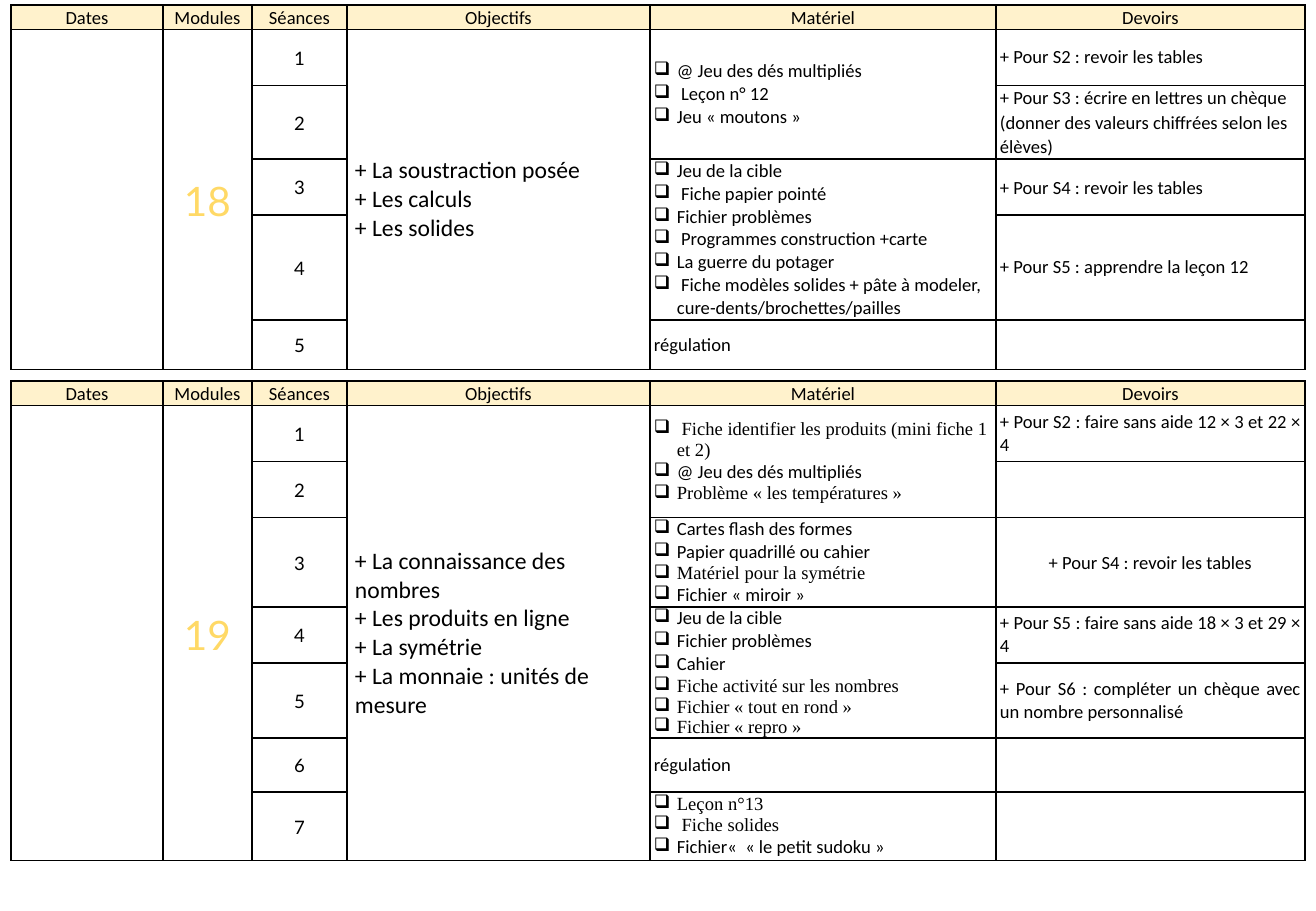
from lxml.etree import SubElement
from pptx import Presentation
from pptx.dml.color import RGBColor
from pptx.enum.text import MSO_ANCHOR, PP_ALIGN
from pptx.oxml.ns import qn
from pptx.util import Pt

PX = 914400 / 121.5
SLIDE_SIZE = (1316, 911)
LEFT = 11
COLUMN_WIDTHS = (152, 89, 95, 303, 346, 309)
INSET, WIDE_INSET, BULLET_INDENT = 4, 8, 23
COLORS = {"text": "000000", "border": "000000", "header": "FFF2CC",
          "session": "FFFFFF", "module": "FFD966"}
SANS, NUMBER, SERIF = "Calibri", "Lato", "Times New Roman"

HEADERS = ("Dates", "Modules", "Séances", "Objectifs", "Matériel", "Devoirs")
SPACED = {"line": 1.07, "before": 14}
CENTERED = {**SPACED, "align": PP_ALIGN.CENTER}
CLOSE = {"before": 3}
JUSTIFIED = {**CLOSE, "align": PP_ALIGN.JUSTIFY}

MODULES = [
    {
        "number": "18",
        "top": 5,
        "heights": (24, 56, 73, 56, 105, 49),
        "objectives": ["+ La soustraction posée", "+ Les calculs", "+ Les solides"],
        "materials": [
            (1, 2, [("@ Jeu des dés multipliés", SANS), (" Leçon n° 12", SANS),
                    ("Jeu « moutons »", SANS)]),
            (3, 4, [("Jeu de la cible", SANS), (" Fiche papier pointé", SANS),
                    ("Fichier problèmes", SANS),
                    (" Programmes construction +carte", SANS),
                    ("La guerre du potager", SANS),
                    (" Fiche modèles solides + pâte à modeler, "
                     "cure-dents/brochettes/pailles", SANS)]),
        ],
        "regulation": 5,
        "homework": {
            1: ("+ Pour S2 : revoir les tables", CLOSE),
            2: ("+ Pour S3 : écrire en lettres un chèque "
                "(donner des valeurs chiffrées selon les élèves)", SPACED),
            3: ("+ Pour S4 : revoir les tables", SPACED),
            4: ("+ Pour S5 : apprendre la leçon 12", CLOSE),
        },
    },
    {
        "number": "19",
        "top": 381,
        "heights": (24, 56, 56, 89, 56, 75, 54, 69),
        "objectives": ["+ La connaissance des nombres", "+ Les produits en ligne",
                       "+ La symétrie", "+ La monnaie : unités de mesure"],
        "materials": [
            (1, 2, [(" Fiche identifier les produits (mini fiche 1 et 2)", SERIF),
                    ("@ Jeu des dés multipliés", SANS),
                    ("Problème « les températures »", SERIF)]),
            (3, 3, [("Cartes flash des formes", SANS),
                    ("Papier quadrillé ou cahier", SANS),
                    ("Matériel pour la symétrie", SERIF),
                    ("Fichier « miroir »", SANS)]),
            (4, 5, [("Jeu de la cible", SANS), ("Fichier problèmes", SANS),
                    ("Cahier", SANS), ("Fiche activité sur les nombres", SERIF),
                    ("Fichier « tout en rond »", SERIF),
                    ("Fichier « repro »", SERIF)]),
            (7, 7, [("Leçon n°13", SERIF), (" Fiche solides", SERIF),
                    ("Fichier«  « le petit sudoku »", SANS)]),
        ],
        "regulation": 6,
        "homework": {
            1: ("+ Pour S2 : faire sans aide 12 × 3 et 22 × 4", JUSTIFIED),
            3: ("+ Pour S4 : revoir les tables", CENTERED),
            4: ("+ Pour S5 : faire sans aide 18 × 3 et 29 × 4", JUSTIFIED),
            5: ("+ Pour S6 : compléter un chèque avec un nombre personnalisé",
                JUSTIFIED),
        },
    },
]


def px(length):
    return round(length * PX)


def add_bullet(paragraph):
    properties = paragraph._p.get_or_add_pPr()
    properties.set("marL", str(px(BULLET_INDENT)))
    properties.set("indent", str(-px(BULLET_INDENT)))
    SubElement(properties, qn("a:buChar"), char="❑")


def write(cell, lines, size=11, color="text", font=SANS, align=PP_ALIGN.LEFT,
          line=None, before=0, inset=INSET, bullet=False):
    cell.vertical_anchor = MSO_ANCHOR.MIDDLE
    cell.margin_left = cell.margin_right = px(inset)
    cell.margin_top = cell.margin_bottom = 0
    frame = cell.text_frame
    for index, (text, line_font) in enumerate(
            (entry, font) if isinstance(entry, str) else entry for entry in lines):
        paragraph = frame.add_paragraph() if index else frame.paragraphs[0]
        paragraph.alignment = align
        paragraph.space_before = Pt(before)
        if line:
            paragraph.line_spacing = line
        if bullet:
            add_bullet(paragraph)
        run = paragraph.add_run()
        run.text = text
        run.font.size = Pt(size)
        run.font.name = line_font
        run.font.color.rgb = RGBColor.from_string(COLORS[color])


def style_cell(cell, fill):
    properties = cell._tc.get_or_add_tcPr()
    for side in ("a:lnL", "a:lnR", "a:lnT", "a:lnB"):
        border = SubElement(properties, qn(side), w=str(Pt(1)))
        solid = SubElement(border, qn("a:solidFill"))
        SubElement(solid, qn("a:srgbClr"), val=COLORS["border"])
    if fill:
        cell.fill.solid()
        cell.fill.fore_color.rgb = RGBColor.from_string(COLORS[fill])
    else:
        cell.fill.background()


def add_module(slide, module):
    heights = module["heights"]
    last = len(heights) - 1
    grid = slide.shapes.add_table(
        len(heights), len(HEADERS), px(LEFT), px(module["top"]),
        px(sum(COLUMN_WIDTHS)), px(sum(heights))).table
    grid.first_row = grid.horz_banding = False
    for column, width in zip(grid.columns, COLUMN_WIDTHS):
        column.width = px(width)
    for row, height in enumerate(heights):
        grid.rows[row].height = px(height)
        for column in range(len(HEADERS)):
            fill = "header" if row == 0 else "session" if column == 2 else None
            style_cell(grid.cell(row, column), fill)

    for column, header in enumerate(HEADERS):
        write(grid.cell(0, column), [header], **CENTERED)
    for column in (0, 1, 3):
        grid.cell(1, column).merge(grid.cell(last, column))
    write(grid.cell(1, 1), [module["number"]], size=24, color="module",
          font=NUMBER, **CENTERED)
    write(grid.cell(1, 3), module["objectives"], size=14, inset=WIDE_INSET)
    for session in range(1, last + 1):
        write(grid.cell(session, 2), [str(session)], font=NUMBER, **CENTERED)
    for first, final, items in module["materials"]:
        if final > first:
            grid.cell(first, 4).merge(grid.cell(final, 4))
        write(grid.cell(first, 4), items, bullet=True)
    write(grid.cell(module["regulation"], 4), ["régulation"])
    for session, (task, layout) in module["homework"].items():
        write(grid.cell(session, 5), [task], **layout)


def main():
    deck = Presentation()
    deck.slide_width, deck.slide_height = map(px, SLIDE_SIZE)
    slide = deck.slides.add_slide(deck.slide_layouts[6])
    for module in MODULES:
        add_module(slide, module)
    deck.save("out.pptx")


if __name__ == "__main__":
    main()
